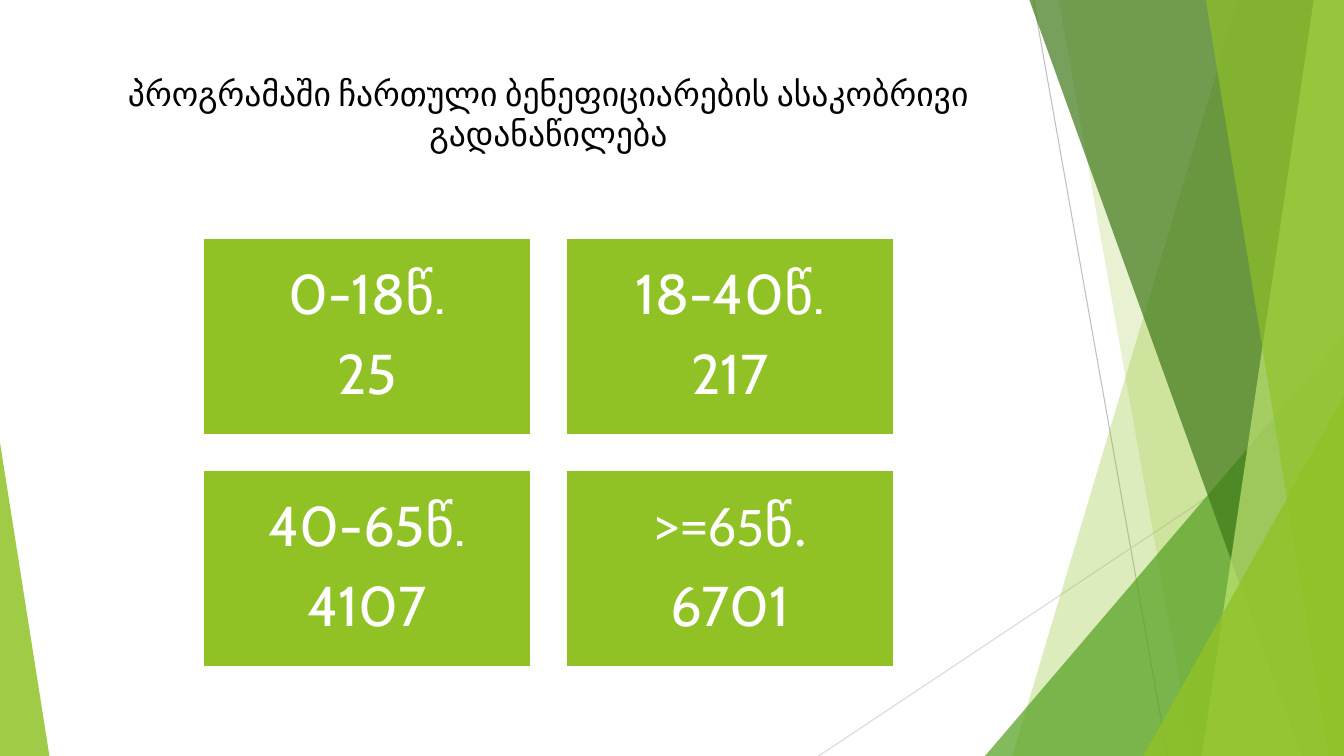
from lxml import etree
from pptx import Presentation
from pptx import util as u
from pptx.dml.color import RGBColor
from pptx.enum import shapes, text
from pptx.oxml import ns

GREEN = RGBColor(0x90, 0xC2, 0x26)
MID_GREEN = RGBColor(0x54, 0xA0, 0x21)
DARK_GREEN = RGBColor(0x3F, 0x78, 0x19)
PALE_GREEN = RGBColor(0xC0, 0xE4, 0x74)
GREY = RGBColor(0xBF, 0xBF, 0xBF)
LIGHT_GREY = RGBColor(0xD9, 0xD9, 0xD9)
WHITE = RGBColor(0xFF, 0xFF, 0xFF)
BLACK = RGBColor(0, 0, 0)

WIDTH, HEIGHT = 13.33, 7.5
CARD_W, CARD_H, GAP = 3.26, 1.96, 0.34
CARDS_LEFT, CARDS_TOP = 2.01, 2.36
AGE_GROUPS = [
    ("0-18წ.", "25", "Cabin"),
    ("18-40წ.", "217", "Cabin"),
    ("40-65წ.", "4107", "Cabin"),
    (">=65წ.", "6701", "Calibri"),
]


def write(p, content, font="Cabin", size=40, color=WHITE, after=None, spacing=None):
    p.alignment = text.PP_ALIGN.CENTER
    if after is not None:
        p.space_after = u.Pt(after)
    if spacing is not None:
        p.line_spacing = spacing
    r = p.add_run()
    r.text = content
    r.font.name = font
    r.font.size = u.Pt(size)
    r.font.color.rgb = color


class FacetSlide:
    """A slide with green facets along its sides."""

    def __init__(self, prs):
        self.s = prs.slides.add_slide(prs.slide_layouts[5])

    def line(self, x1, y1, x2, y2, color):
        c = self.s.shapes.add_connector(
            shapes.MSO_CONNECTOR.STRAIGHT, *map(u.Inches, (x1, y1, x2, y2)))
        c.line.color.rgb = color
        c.line.width = u.Pt(0.75)
        etree.SubElement(c._element.spPr, ns.qn("a:effectLst"))

    def tint(self, sp, color, opacity):
        """Fill without outline; opacity in percent."""
        sp.shadow.inherit = False
        sp.line.fill.background()
        sp.fill.solid()
        sp.fill.fore_color.rgb = color
        clr = sp._element.spPr.find(".//" + ns.qn("a:srgbClr"))
        etree.SubElement(clr, ns.qn("a:alpha"), val=str(opacity * 1000))

    def facet(self, top_x, bottom_x, color, opacity):
        """Full-height facet between a slanted edge and the slide's right side."""
        outline = [(top_x, 0), (WIDTH, 0), (WIDTH, HEIGHT), (bottom_x, HEIGHT)]
        points = [(u.Inches(x), u.Inches(y)) for x, y in outline]
        fb = self.s.shapes.build_freeform(*points[0])
        fb.add_line_segments(points[1:], close=True)
        self.tint(fb.convert_to_shape(), color, opacity)

    def triangle(self, left, top, width, apex, color, opacity):
        """Triangle standing on the bottom edge; apex 0 is left, 1 is right."""
        sp = self.s.shapes.add_shape(
            shapes.MSO_SHAPE.ISOSCELES_TRIANGLE,
            *map(u.Inches, (left, top, width, HEIGHT - top)))
        sp.adjustments[0] = apex
        self.tint(sp, color, opacity)

    def title(self, content, left, top, width, height):
        sp = self.s.shapes.title
        sp.left, sp.top, sp.width, sp.height = map(u.Inches, (left, top, width, height))
        tf = sp.text_frame
        tf.word_wrap = True
        tf.auto_size = text.MSO_AUTO_SIZE.NONE
        tf.vertical_anchor = text.MSO_ANCHOR.TOP
        write(tf.paragraphs[0], content, size=24, color=BLACK)

    def card(self, left, top, ages, count, ages_font):
        sp = self.s.shapes.add_shape(
            shapes.MSO_SHAPE.RECTANGLE, *map(u.Inches, (left, top, CARD_W, CARD_H)))
        sp.shadow.inherit = False
        sp.fill.solid()
        sp.fill.fore_color.rgb = GREEN
        sp.line.color.rgb = WHITE
        sp.line.width = u.Pt(1.5)
        tf = sp.text_frame
        tf.word_wrap = True
        tf.vertical_anchor = text.MSO_ANCHOR.MIDDLE
        tf.margin_left = tf.margin_right = u.Inches(0.17)
        tf.margin_top = tf.margin_bottom = u.Inches(0.17)
        write(tf.paragraphs[0], ages, font=ages_font, after=14, spacing=0.9)
        write(tf.add_paragraph(), count, after=14, spacing=0.9)


def main():
    prs = Presentation()
    prs.slide_width, prs.slide_height = u.Inches(WIDTH), u.Inches(HEIGHT)
    slide = FacetSlide(prs)

    slide.line(10.25, 0, 11.58, HEIGHT, GREY)
    slide.line(WIDTH, 4.03, 8.12, HEIGHT, LIGHT_GREY)
    slide.facet(12.28, 10.04, GREEN, 30)
    slide.facet(10.5, 11.83, GREEN, 20)
    slide.triangle(9.77, 3.33, 3.56, 1, MID_GREEN, 72)
    slide.facet(10.21, 12.91, DARK_GREEN, 70)
    slide.facet(13.03, 11.92, PALE_GREEN, 70)
    slide.facet(11.96, 13.18, GREEN, 65)
    slide.triangle(11.34, 3.93, 1.99, 1, GREEN, 80)
    slide.triangle(0, 4.39, 0.49, 0, GREEN, 85)

    slide.title("პროგრამაში ჩართული ბენეფიციარების ასაკობრივი გადანაწილება",
                0.74, 0.67, 9.4, 1.12)
    for i, group in enumerate(AGE_GROUPS):
        row, col = divmod(i, 2)
        slide.card(CARDS_LEFT + col * (CARD_W + GAP),
                   CARDS_TOP + row * (CARD_H + GAP), *group)

    prs.save("out.pptx")


if __name__ == "__main__":
    main()
